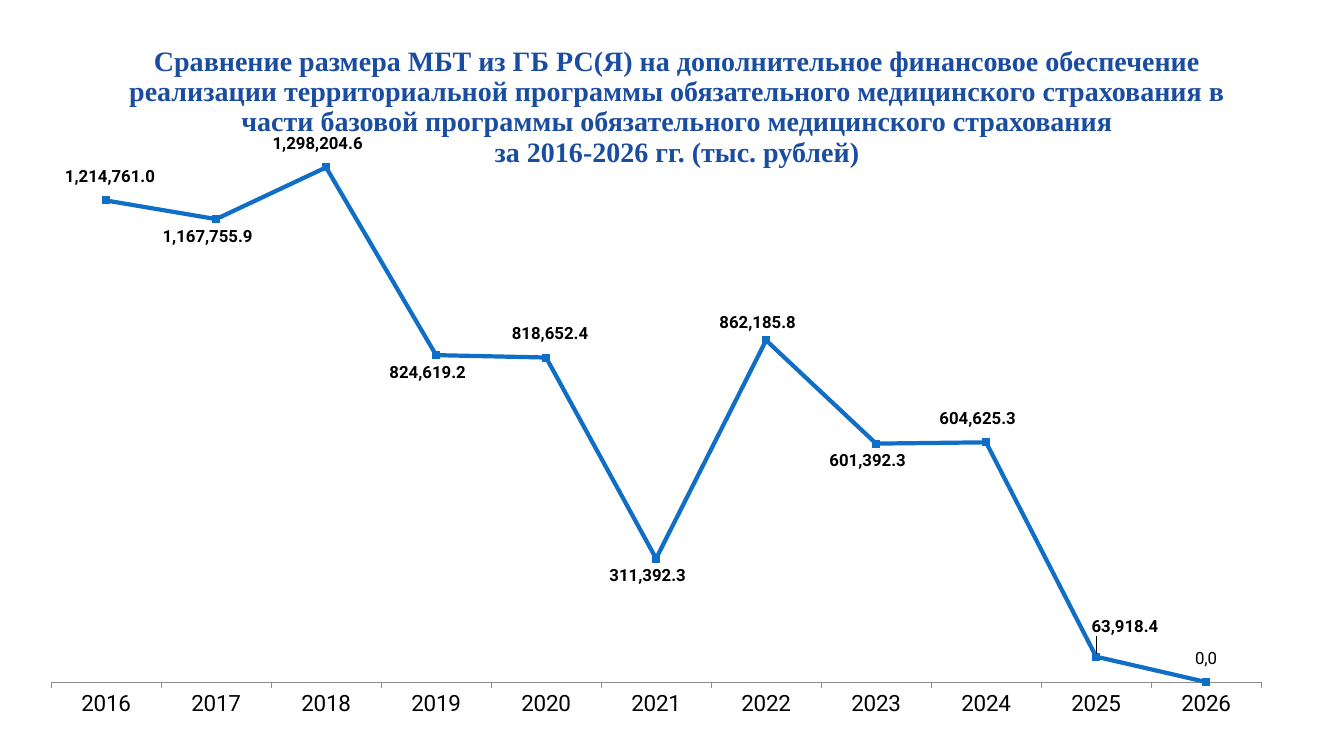
from dataclasses import dataclass

from pptx import Presentation
from pptx import util as u
from pptx.chart.data import CategoryChartData
from pptx.dml.color import RGBColor
from pptx.enum import chart as ch, text
from pptx.oxml import parse_xml
from pptx.oxml.ns import nsdecls


@dataclass(frozen=True)
class Theme:
    """Colours, fonts and type sizes of the slide."""
    title: RGBColor = RGBColor(0x1A, 0x4D, 0xA0)
    line: RGBColor = RGBColor(0x0F, 0x6F, 0xC6)
    ink: RGBColor = RGBColor(0, 0, 0)
    axis: RGBColor = RGBColor(0x8C, 0x8C, 0x8C)
    serif: str = "Times New Roman"
    sans: str = "Roboto"
    title_size: u.Pt = u.Pt(20)
    axis_size: u.Pt = u.Pt(16)
    label_size: u.Pt = u.Pt(12)


THEME = Theme()
WIDTH, HEIGHT = u.Inches(13.33), u.Inches(7.5)
CHART_BOX = [u.Inches(side) for side in (0.31, 1.02, 12.31, 6.18)]
TITLE_BOX = [u.Inches(side) for side in (1.18, 0.42, 11.07, 0.79)]
TITLE = (
    "Сравнение размера МБТ из ГБ РС(Я) на дополнительное финансовое обеспечение "
    "реализации территориальной программы обязательного медицинского страхования "
    "в части базовой программы обязательного медицинского страхования",
    "за 2016-2026 гг. (тыс. рублей)",
)
TRANSFERS = (1214761, 1167755.9, 1298204.6, 824619.2, 818652.4, 311392.3,
             862185.8, 601392.3, 604625.3, 63918.4, 0)
FIRST_YEAR = 2016
NUMBER_FORMAT = r"#,##0.0\ _₽_-"
LABELS_ABOVE = {2016: (0.01, -0.01), 2018: (0, -0.01), 2020: (0.01, -0.01),
                2022: (0, 0), 2024: (0, -0.01), 2025: (0.03, -0.02),
                2026: (0, -0.01)}


def apply(target, **values):
    """Set each given attribute on the target."""
    for name, value in values.items():
        setattr(target, name, value)


def style_font(font, color, **values):
    """Give a font its colour and format values."""
    apply(font, **values)
    font.color.rgb = color


def manual_layout(**values):
    """Return a chart layout element with the given settings."""
    settings = "".join(f'<c:{name} val="{value}"/>' for name, value in values.items())
    return parse_xml(f'<c:layout {nsdecls("c")}><c:manualLayout>{settings}'
                     "</c:manualLayout></c:layout>")


def place_plot(chart):
    """Fix the inner plot area as shares of the chart."""
    area = chart.element.xpath(".//c:plotArea")[0]
    for layout in area.xpath("c:layout"):
        area.remove(layout)
    area.insert(0, manual_layout(layoutTarget="inner", xMode="edge", yMode="edge",
                                 x=0.016, y=0.039, w=0.975, h=0.891))


def style_axes(chart):
    """Show the year axis and hide the value axis."""
    apply(chart.value_axis, visible=False, has_major_gridlines=False,
          minimum_scale=0, maximum_scale=1400000)
    years = chart.category_axis
    apply(years, has_major_gridlines=False, major_tick_mark=ch.XL_TICK_MARK.OUTSIDE)
    apply(years.format.line, width=u.Pt(0.75))
    years.format.line.color.rgb = THEME.axis
    style_font(years.tick_labels.font, THEME.ink, name=THEME.sans, size=THEME.axis_size)


def style_labels(series):
    """Put labels below the line, and the listed years above it."""
    bold = dict(name=THEME.sans, size=THEME.label_size, bold=True)
    labels = series.data_labels
    apply(labels, show_value=True, number_format=NUMBER_FORMAT,
          number_format_is_linked=False, position=ch.XL_LABEL_POSITION.BELOW)
    style_font(labels.font, THEME.ink, **bold)
    for year, (dx, dy) in LABELS_ABOVE.items():
        index = year - FIRST_YEAR
        label = series.points[index].data_label
        if TRANSFERS[index]:
            style_font(label.font, THEME.ink, **bold)
        else:
            run = label.text_frame.paragraphs[0].add_run()
            run.text = "0,0"
            style_font(run.font, THEME.ink, **{**bold, "bold": False})
        label.position = ch.XL_LABEL_POSITION.ABOVE
        marker = labels._element.xpath(f"c:dLbl/c:idx[@val='{index}']")[0]
        marker.addnext(manual_layout(x=dx, y=dy))


def add_transfer_chart(slide, box):
    """Draw the yearly transfers as a line chart in the box."""
    data = CategoryChartData(number_format=NUMBER_FORMAT)
    data.categories = [str(FIRST_YEAR + step) for step in range(len(TRANSFERS))]
    data.add_series("Series 1", TRANSFERS)
    chart = slide.shapes.add_chart(ch.XL_CHART_TYPE.LINE_MARKERS_STACKED, *box, data).chart
    apply(chart, has_legend=False, has_title=False)
    style_font(chart.font, THEME.ink, name=THEME.sans, size=u.Pt(18))
    place_plot(chart)
    style_axes(chart)
    chart.plots[0].vary_by_categories = False
    series = chart.plots[0].series[0]
    series.smooth = False
    series.format.line.width = u.Pt(3)
    series.format.line.color.rgb = THEME.line
    apply(series.marker, style=ch.XL_MARKER_STYLE.SQUARE, size=5)
    series.marker.format.fill.solid()
    series.marker.format.fill.fore_color.rgb = THEME.line
    series.marker.format.line.color.rgb = THEME.line
    style_labels(series)


def add_title(slide, box):
    """Write the centred title in the box."""
    frame = slide.shapes.add_textbox(*box).text_frame
    apply(frame, word_wrap=True, vertical_anchor=text.MSO_ANCHOR.TOP)
    frame.text = "\n".join(TITLE)
    for paragraph in frame.paragraphs:
        apply(paragraph, alignment=text.PP_ALIGN.CENTER, line_spacing=0.9)
        style_font(paragraph.runs[0].font, THEME.title, name=THEME.serif,
                   size=THEME.title_size, bold=True)


def main():
    """Build and save the presentation."""
    presentation = Presentation()
    apply(presentation, slide_width=WIDTH, slide_height=HEIGHT)
    slide = presentation.slides.add_slide(presentation.slide_layouts[6])
    add_transfer_chart(slide, CHART_BOX)
    add_title(slide, TITLE_BOX)
    presentation.save("out.pptx")


if __name__ == "__main__":
    main()
